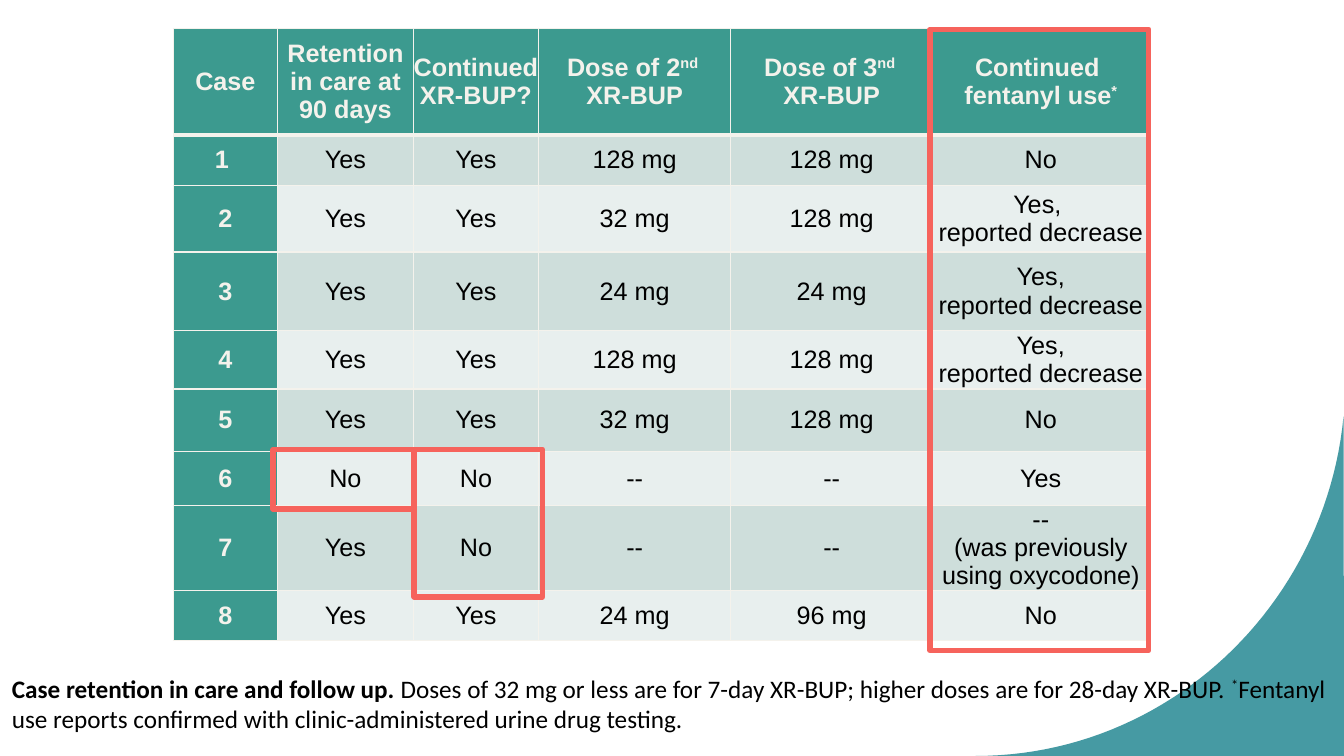
from dataclasses import dataclass
from lxml.etree import SubElement
from pptx import Presentation
from pptx.dml.color import RGBColor as Rgb
from pptx.enum.shapes import MSO_SHAPE as Shape
from pptx.enum.text import MSO_ANCHOR as Anchor, PP_ALIGN as Align
from pptx.oxml import parse_xml
from pptx.oxml.ns import nsdecls, qn
from pptx.util import Cm, Pt

HEAD = [
    "Case",
    "Retention in care at 90 days",
    "Continued XR-BUP?",
    "Dose of 2^nd ^\nXR-BUP",
    "Dose of 3^nd ^\nXR-BUP",
    "Continued \nfentanyl use^*",
]
CASES = [
    ("1 ", "Yes", "Yes", "128 mg", "128 mg", "No"),
    ("2", "Yes", "Yes", "32 mg", "128 mg", "Yes, \nreported decrease"),
    ("3", "Yes", "Yes", "24 mg", "24 mg", "Yes,\nreported decrease"),
    ("4", "Yes", "Yes", "128 mg", "128 mg", "Yes,\nreported decrease"),
    ("5", "Yes", "Yes", "32 mg", "128 mg", "No"),
    ("6", "No", "No", "--", "--", "Yes"),
    ("7", "Yes", "No", "--", "--", "--\n(was previously using oxycodone)"),
    ("8", "Yes", "Yes", "24 mg", "96 mg", "No"),
]
LEAD = "Case retention in care and follow up. "
NOTE = (
    "Doses of 32 mg or less are for 7-day XR-BUP; higher doses are for "
    "28-day XR-BUP. ^*^Fentanyl use reports confirmed with "
    "clinic-administered urine drug testing."
)

WIDE, HIGH = 33.87, 19.05
LEFT, TOP = 4.37, 0.71
COLS = [2.62, 3.43, 3.15, 4.85, 5.08, 5.46]
ROWS = [2.69, 1.27, 1.68, 1.98, 1.47, 1.57, 1.37, 1.93, 1.27]
MARKS = [
    (6.88, 11.33, 3.56, 1.5),
    (10.44, 11.33, 3.23, 3.71),
    (23.44, 0.74, 5.51, 15.65),
]
NOTE_BOX = (0.05, 16.84, 33.81, 2.57)
CURVE = [(24.59, 19.05), (29.41, 19.05), (33.4, 15.29), (33.86, 10.49)]
STEPS = 48


@dataclass(frozen=True)
class Theme:
    green: str = "3C9A8F"
    pale: str = "F4F2EC"
    bands: tuple = ("CEDEDB", "E8EFEE")
    ink: str = "000000"
    mark: str = "F6635C"
    wave: str = "18818C"
    grid: str = "Arial"
    body: str = "Calibri"
    size: int = 18


look = Theme()


def paint(fill, tone):
    fill.solid()
    fill.fore_color.rgb = Rgb.from_string(tone)


def style(font, face, tone):
    font.name, font.size = face, Pt(look.size)
    font.color.rgb = Rgb.from_string(tone)


def add_runs(para, text):
    for i, part in enumerate(text.split("^")):
        if part:
            run = para.add_run()
            run.text = part
            if i % 2:
                run.font._element.set("baseline", "30000")
            yield run


def add_edges(cell, row):
    prop = cell._tc.get_or_add_tcPr()
    wide = {"L": 1, "R": 1, "T": 3 if row == 1 else 1, "B": 1 if row else 3}
    for i, (side, size) in enumerate(wide.items()):
        prop.insert(i, parse_xml(
            f'<a:ln{side} {nsdecls("a")} w="{Pt(size)}"><a:solidFill>'
            f'<a:srgbClr val="{look.pale}"/></a:solidFill></a:ln{side}>'
        ))


def fill_cell(cell, text, row, col):
    bold = row == 0 or col == 0
    paint(cell.fill, look.green if bold else look.bands[(row - 1) % 2])
    add_edges(cell, row)
    cell.vertical_anchor = Anchor.MIDDLE
    cell.margin_left = cell.margin_right = 0
    cell.margin_top = cell.margin_bottom = 0
    frame = cell.text_frame
    for i, line in enumerate(text.split("\n")):
        para = frame.add_paragraph() if i else frame.paragraphs[0]
        para.alignment = Align.CENTER
        for run in add_runs(para, line):
            style(run.font, look.grid, look.pale if bold else look.ink)
            run.font.bold = bold


def add_wave(shapes):
    def point(t):
        mix = ((1 - t) ** 3, 3 * t * (1 - t) ** 2, 3 * t * t * (1 - t), t ** 3)
        return tuple(
            Cm(sum(m * p[k] for m, p in zip(mix, CURVE))) for k in (0, 1)
        )

    arc = [point(i / STEPS) for i in range(STEPS + 1)]
    path = shapes.build_freeform(*arc[0])
    path.add_line_segments(arc[1:] + [(Cm(WIDE), Cm(HIGH))], close=True)
    wave = path.convert_to_shape()
    wave.shadow.inherit = False
    paint(wave.fill, look.wave)
    tone = wave._element.spPr.find(f".//{qn('a:srgbClr')}")
    SubElement(tone, qn("a:alpha"), val="80000")
    wave.line.fill.background()


def add_grid(shapes):
    size = len(ROWS), len(COLS)
    grid = shapes.add_table(
        *size, Cm(LEFT), Cm(TOP), Cm(sum(COLS)), Cm(sum(ROWS))
    ).table
    grid.horz_banding = False
    for col, wide in zip(grid.columns, COLS):
        col.width = Cm(wide)
    for row, high in zip(grid.rows, ROWS):
        row.height = Cm(high)
    for r, line in enumerate([HEAD, *CASES]):
        for c, text in enumerate(line):
            fill_cell(grid.cell(r, c), text, r, c)


def add_note(shapes):
    frame = shapes.add_textbox(*map(Cm, NOTE_BOX)).text_frame
    frame.word_wrap = True
    para = frame.paragraphs[0]
    style(para.font, look.body, look.ink)
    lead = para.add_run()
    lead.text = LEAD
    lead.font.bold = True
    for run in [lead, *add_runs(para, NOTE)]:
        style(run.font, look.body, look.ink)


def add_marks(shapes):
    for place in MARKS:
        box = shapes.add_shape(Shape.RECTANGLE, *map(Cm, place))
        box.shadow.inherit = False
        box.fill.background()
        box.line.color.rgb = Rgb.from_string(look.mark)
        box.line.width = Pt(4)


def main():
    deck = Presentation()
    deck.slide_width, deck.slide_height = Cm(WIDE), Cm(HIGH)
    shapes = deck.slides.add_slide(deck.slide_layouts[6]).shapes
    for draw in (add_wave, add_grid, add_note, add_marks):
        draw(shapes)
    deck.save("out.pptx")


if __name__ == "__main__":
    main()
